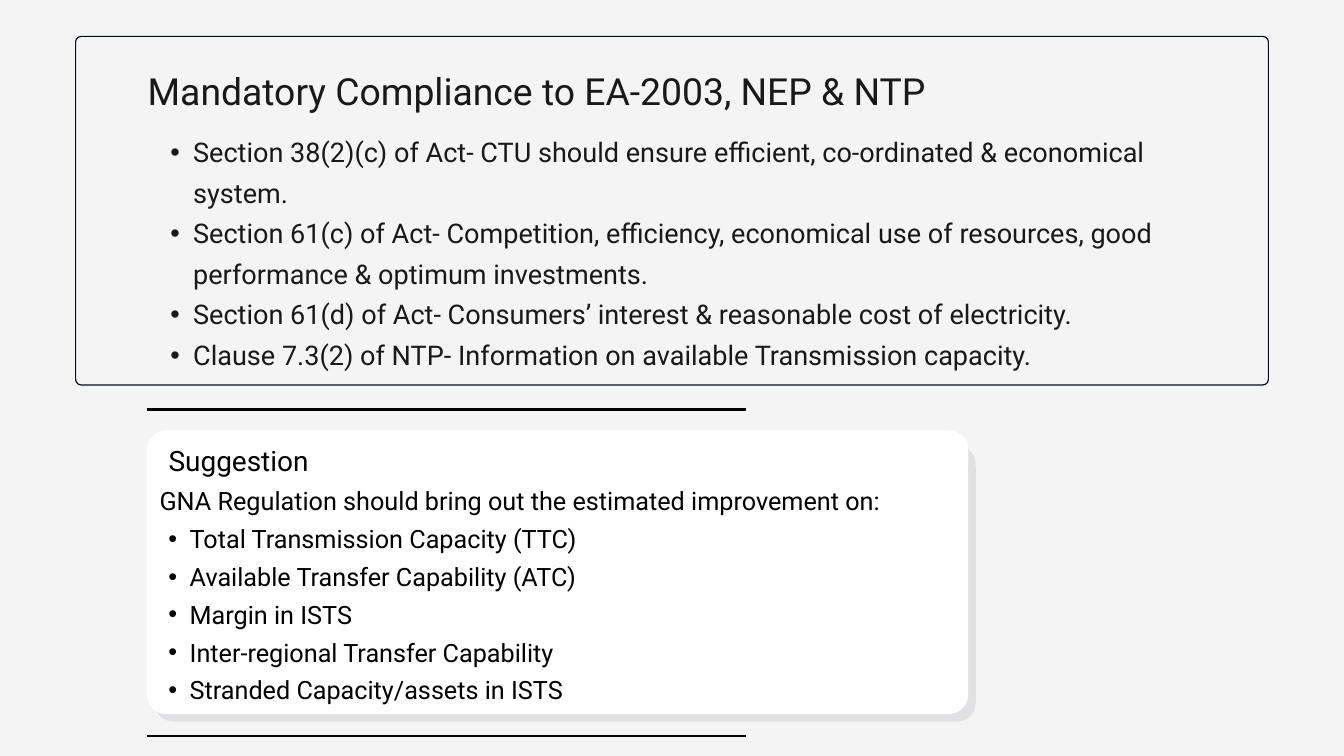
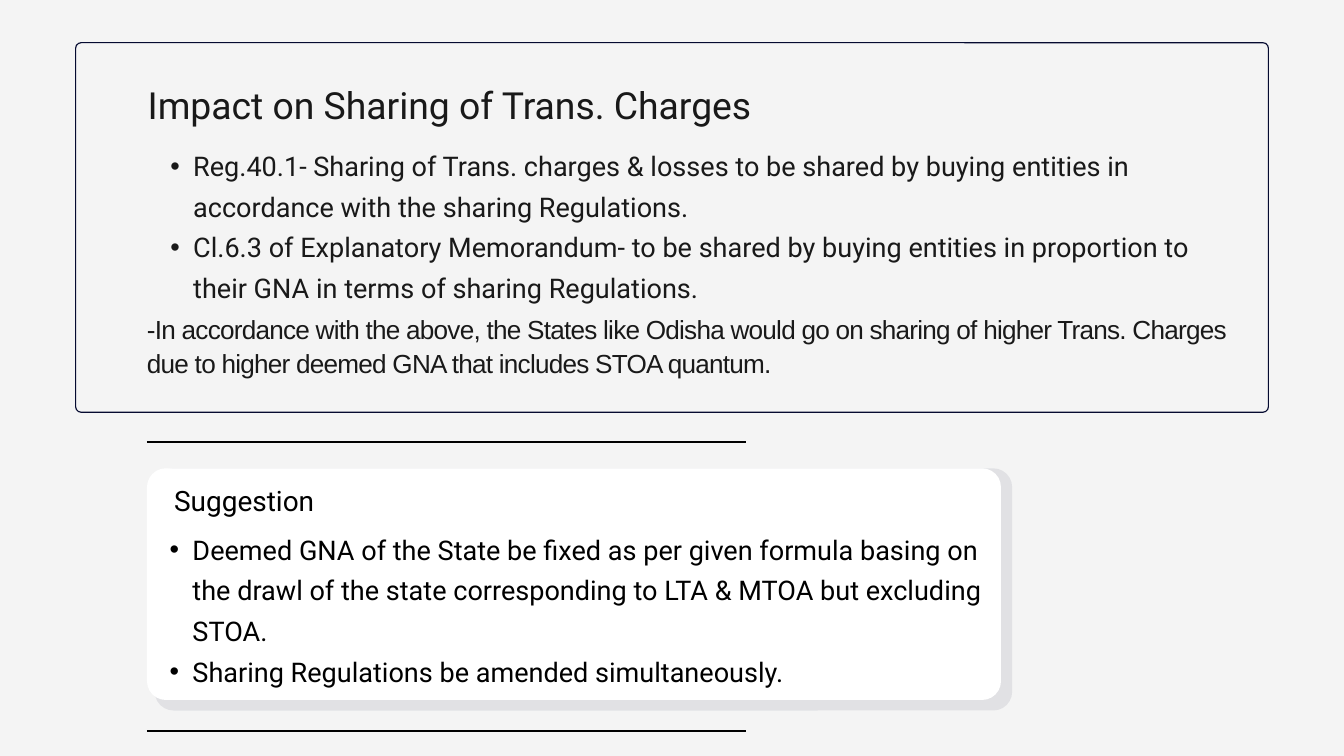
from collections import namedtuple

from lxml.etree import SubElement
from pptx import Presentation
from pptx.dml.color import RGBColor
from pptx.enum.shapes import MSO_CONNECTOR, MSO_SHAPE
from pptx.enum.text import PP_ALIGN
from pptx.oxml.ns import qn
from pptx.util import Emu, Pt

EMU_PER_PX = 9525
COLORS = {
    "background": "F4F4F4",
    "navy": "050A30",
    "ink": "191919",
    "black": "000000",
    "white": "FFFFFF",
}
MARGIN = 210
RULE_LENGTH = 856
FRAME_RADIUS = 8
CARD_RADIUS = 27

Box = namedtuple("Box", "left top width height")
Style = namedtuple("Style", "size spacing color font", defaults=["Roboto"])

TITLE = Style(40, 52, "ink")
POINTS = Style(29, 43.5, "ink")
NOTE = Style(28, 36.4, "ink", "Arial")
HEADING = Style(30, 42, "black")


def px(length):
    return Emu(length * EMU_PER_PX)


def emu_box(box):
    return [px(length) for length in box]


def color(name):
    return RGBColor.from_string(COLORS[name])


def add_rounded(page, box, radius):
    shape = page.shapes.add_shape(MSO_SHAPE.ROUNDED_RECTANGLE, *emu_box(box))
    shape.adjustments[0] = radius / min(box.width, box.height)
    shape.shadow.inherit = False
    return shape


def add_filled(page, box, name, opacity=100):
    shape = add_rounded(page, box, CARD_RADIUS)
    shape.fill.solid()
    shape.fill.fore_color.rgb = color(name)
    shape.line.fill.background()
    if opacity < 100:
        fill_color = shape.fill._xPr.find(qn("a:solidFill"))[0]
        SubElement(fill_color, qn("a:alpha"), val=str(opacity * 1000))


def add_rule(page, left, top):
    rule = page.shapes.add_connector(
        MSO_CONNECTOR.STRAIGHT, px(left), px(top), px(left + RULE_LENGTH), px(top)
    )
    rule.line.color.rgb = color("black")
    rule.line.width = Pt(2.25)
    SubElement(rule._element.spPr, qn("a:effectLst"))


def add_text(page, box, lines, style):
    frame = page.shapes.add_textbox(*emu_box(box)).text_frame
    frame.word_wrap = True
    frame.margin_left = frame.margin_top = frame.margin_right = frame.margin_bottom = 0
    frame.text = "\n".join(lines)
    for para in frame.paragraphs:
        para.line_spacing = Pt(style.spacing)
        for span in para.runs:
            span.font.size = Pt(style.size)
            span.font.name = style.font
            span.font.color.rgb = color(style.color)
    return frame.paragraphs


def add_bullets(paragraphs, indent):
    for para in paragraphs:
        para.level = 1
        properties = para._p.get_or_add_pPr()
        properties.set("marL", str(px(indent)))
        properties.set("indent", str(-px(indent) // 2))
        SubElement(properties, qn("a:buFont"), typeface="Arial")
        SubElement(properties, qn("a:buChar"), char="•")


def add_provisions(page, box, title_inset, title, points, note=None):
    frame = add_rounded(page, box, FRAME_RADIUS)
    frame.fill.background()
    frame.line.color.rgb = color("navy")
    frame.line.width = Pt(1.25)

    left = box.left + 103
    title_top = box.top + title_inset
    add_text(page, Box(left, title_top, 1497, 66), [title], TITLE)
    points_box = Box(left, title_top + 90, 1497, 58 * len(points) * 3 // 2)
    add_bullets(add_text(page, points_box, points, POINTS), 65)
    if note:
        note_box = Box(MARGIN, box.top + 383, 1557, 94)
        for para in add_text(page, note_box, [note], NOTE):
            for span in para.runs:
                span.font._element.set("spc", "-80")


def add_suggestion(page, box, shadow, heading_at, body_offset, style, indent, points, lead=None):
    shadow_box = Box(box.left + 11, box.top + shadow.top, shadow.width, shadow.height)
    add_filled(page, shadow_box, "navy", 8)
    add_filled(page, box, "white")

    heading_left, heading_top = heading_at
    heading_box = Box(box.left + heading_left, box.top + heading_top, 230, 54)
    add_text(page, heading_box, ["Suggestion"], HEADING)[0].alignment = PP_ALIGN.RIGHT

    body_box = Box(box.left, box.top + body_offset, box.width - 13 * (lead is None), box.height - body_offset)
    lines = [lead, *points] if lead else points
    paragraphs = add_text(page, body_box, lines, style)
    if lead:
        paragraphs[0]._p.get_or_add_pPr().set("marL", str(px(18)))
        paragraphs = paragraphs[1:]
    add_bullets(paragraphs, indent)


def add_page(deck, rule_tops):
    page = deck.slides.add_slide(deck.slide_layouts[6])
    page.background.fill.solid()
    page.background.fill.fore_color.rgb = color("background")
    for top in rule_tops:
        add_rule(page, MARGIN, top)
    return page


def add_compliance_page(deck):
    page = add_page(deck, (585, 1052))
    add_provisions(
        page, Box(108, 52, 1704, 498), 40,
        "Mandatory Compliance to EA-2003, NEP & NTP",
        [
            "Section 38(2)(c) of Act- CTU should ensure efficient, co-ordinated & economical system.",
            "Section 61(c) of Act- Competition, efficiency, economical use of resources, good performance & optimum investments.",
            "Section 61(d) of Act- Consumers’ interest & reasonable cost of electricity.",
            "Clause 7.3(2) of NTP- Information on available Transmission capacity.",
        ],
    )
    add_suggestion(
        page, Box(MARGIN, 615, 1173, 405), Box(11, 21, 1173, 395),
        (1, 10), 68, Style(27, 40.5, "black"), 61,
        [
            "Total Transmission Capacity (TTC)",
            "Available Transfer Capability (ATC)",
            "Margin in ISTS",
            "Inter-regional Transfer Capability",
            "Stranded Capacity/assets in ISTS",
        ],
        "GNA Regulation should bring out the estimated improvement on:",
    )


def add_charges_page(deck):
    page = add_page(deck, (632, 1044))
    add_provisions(
        page, Box(108, 61, 1704, 528), 51,
        "Impact on Sharing of Trans. Charges",
        [
            "Reg.40.1- Sharing of Trans. charges & losses to be shared by buying entities in accordance with the sharing Regulations.",
            "Cl.6.3 of Explanatory Memorandum- to be shared by buying entities in proportion to their GNA in terms of sharing Regulations.",
        ],
        "-In accordance with the above, the States like Odisha would go on sharing of higher Trans. Charges due to higher deemed GNA that includes STOA quantum.",
    )
    add_suggestion(
        page, Box(MARGIN, 669, 1220, 331), Box(11, 0, 1225, 346),
        (9, 13), 81, Style(29, 43.5, "black"), 65,
        [
            "Deemed GNA of the State be fixed as per given formula basing on the drawl of the state corresponding to LTA & MTOA but excluding STOA.",
            "Sharing Regulations be amended simultaneously.",
        ],
    )


def main():
    deck = Presentation()
    deck.slide_width = px(1920)
    deck.slide_height = px(1080)
    add_compliance_page(deck)
    add_charges_page(deck)
    deck.save("out.pptx")


if __name__ == "__main__":
    main()
